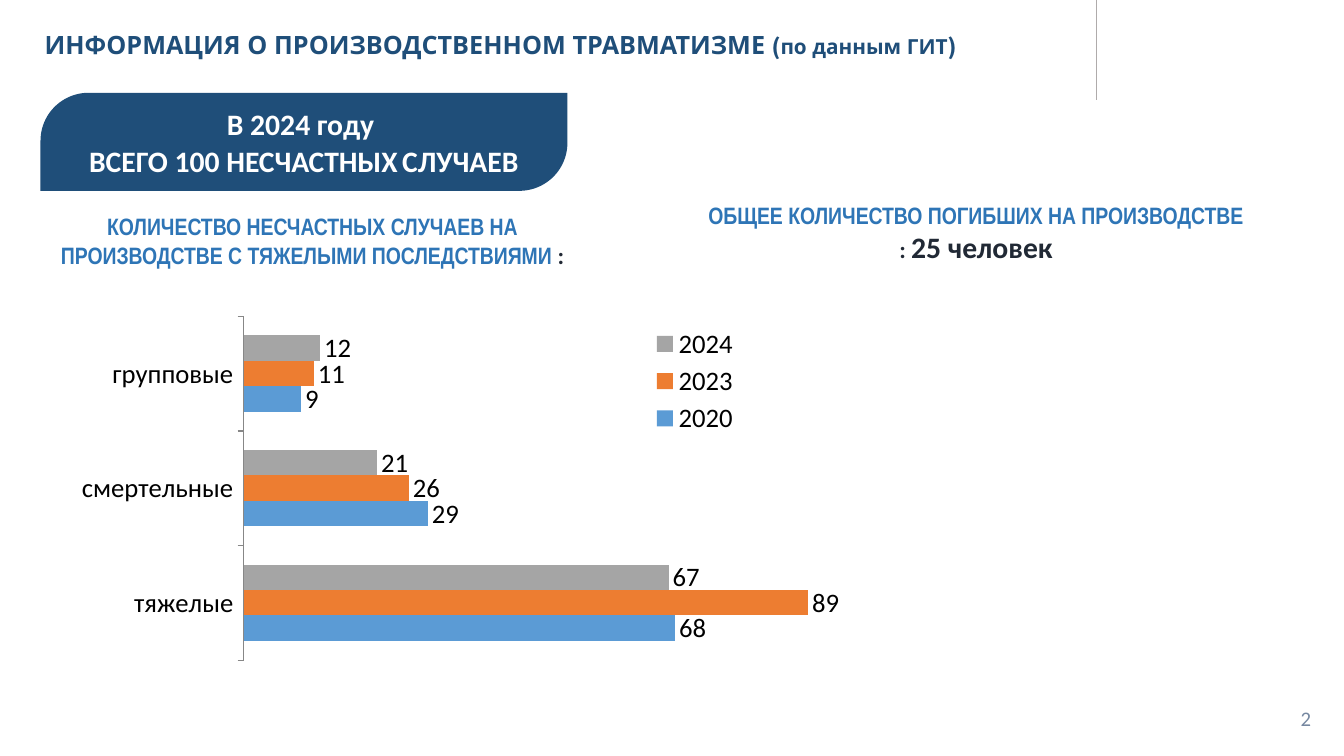
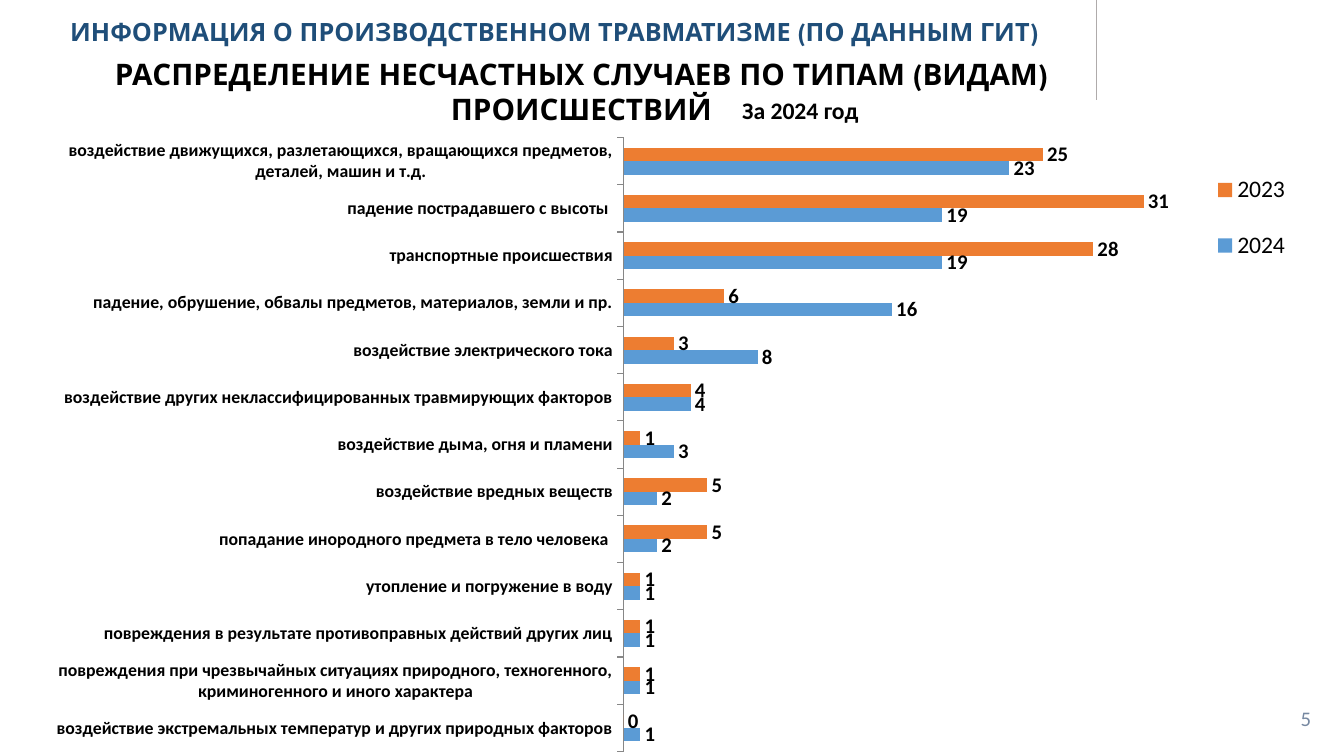
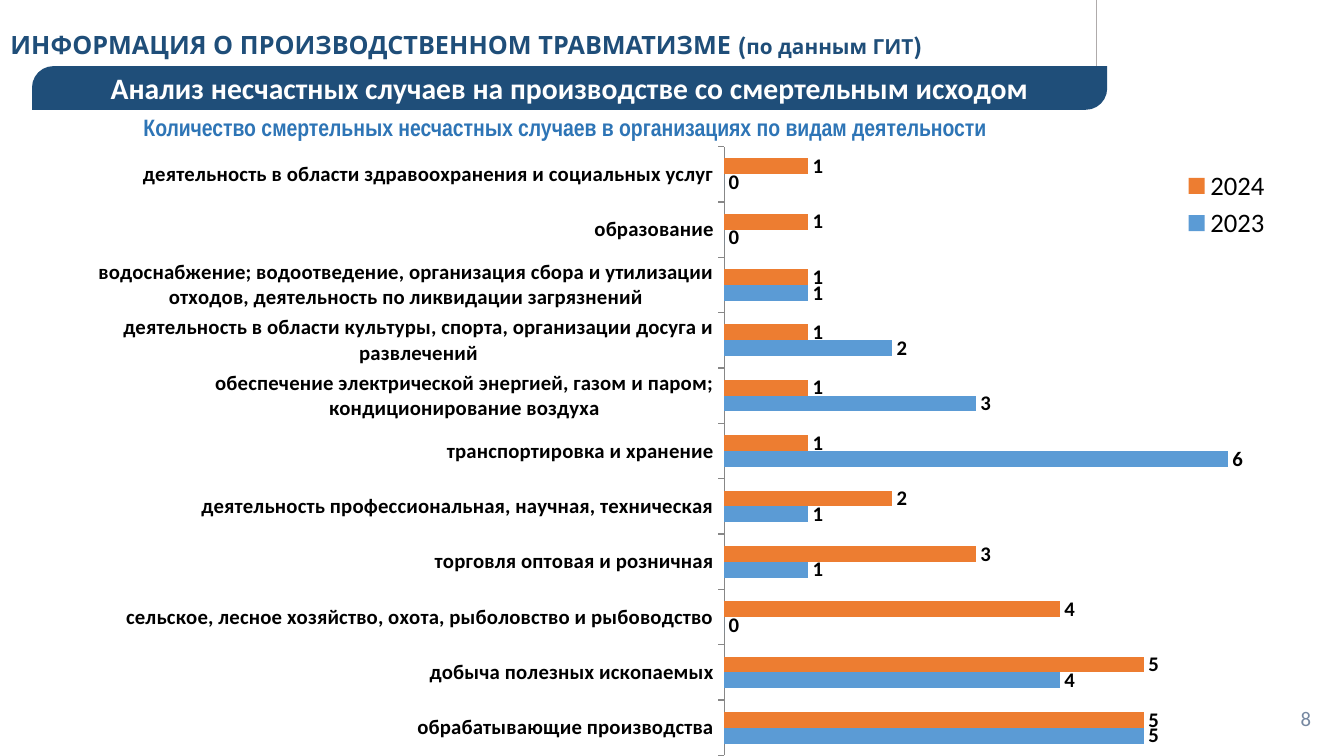
from lxml import etree
from pptx import Presentation
from pptx.chart.data import CategoryChartData
from pptx.dml.color import RGBColor
from pptx.enum.chart import XL_CHART_TYPE as CT, XL_LABEL_POSITION as LP
from pptx.enum.chart import XL_LEGEND_POSITION as LG, XL_TICK_MARK as TM
from pptx.enum.shapes import MSO_CONNECTOR, MSO_SHAPE
from pptx.enum.text import MSO_ANCHOR, PP_ALIGN
from pptx.oxml.ns import qn
from pptx.util import Inches, Pt

NAVY = RGBColor(0x1F, 0x4E, 0x79)
ACCENT = RGBColor(0x2E, 0x75, 0xB6)
INK = RGBColor(0x21, 0x29, 0x35)
BLACK = RGBColor(0, 0, 0)
WHITE = RGBColor(0xFF, 0xFF, 0xFF)
RULE = RGBColor(0xAF, 0xAB, 0xAB)
AXIS = RGBColor(0x87, 0x87, 0x87)
PAGE = RGBColor(0x76, 0x88, 0xA1)
BLUE = RGBColor(0x5B, 0x9B, 0xD5)
ORANGE = RGBColor(0xED, 0x7D, 0x31)
GREY = RGBColor(0xA5, 0xA5, 0xA5)

BODY, HEAD, NARROW = "Calibri", "League Spartan", "Arial Narrow"
TITLE = "ИНФОРМАЦИЯ О ПРОИЗВОДСТВЕННОМ ТРАВМАТИЗМЕ ("
TITLE_RUNS = [TITLE, ("по данным ГИТ", {"size": 14}), ")"]


def set_font(font, name=BODY, size=18, color=BLACK, bold=False):
    font.name, font.size, font.bold = name, Pt(size), bold
    font.color.rgb = color


def write(tf, paragraphs, align=PP_ALIGN.LEFT, spacing=None, before=0, **fmt):
    for i, runs in enumerate(paragraphs):
        p = tf.add_paragraph() if i else tf.paragraphs[0]
        p.alignment = align
        if spacing:
            p.line_spacing = spacing
        if i and before:
            p.space_before = Pt(before)
        for run in runs:
            text, change = (run, {}) if isinstance(run, str) else run
            r = p.add_run()
            r.text = text
            set_font(r.font, **{**fmt, **change})


def set_layout(parent, index, box, inner=False):
    for old in parent.findall(qn("c:layout")):
        parent.remove(old)
    layout = etree.Element(qn("c:layout"))
    manual = etree.SubElement(layout, qn("c:manualLayout"))
    values = [("layoutTarget", "inner")] if inner else []
    values += [("xMode", "edge"), ("yMode", "edge"), *zip("xywh", box)]
    for tag, value in values:
        etree.SubElement(manual, qn("c:" + tag)).set("val", str(value))
    parent.insert(index, layout)


class Deck:
    """Holds the shared style and the slide being drawn."""

    def __init__(self):
        self.prs = Presentation()
        self.prs.slide_width, self.prs.slide_height = Inches(12.6), Inches(7.09)

    def new_slide(self):
        self.s = self.prs.slides.add_slide(self.prs.slide_layouts[6])
        x = Inches(10.28)
        line = self.s.shapes.add_connector(MSO_CONNECTOR.STRAIGHT, x, 0, x, Inches(0.94))
        line.line.color.rgb, line.line.width = RULE, Pt(0.75)
        etree.SubElement(line._element.spPr, qn("a:effectLst"))

    def text(self, box, paragraphs, inset=True, **fmt):
        tf = self.s.shapes.add_textbox(*map(Inches, box)).text_frame
        tf.word_wrap = True
        if not inset:
            tf.margin_left = tf.margin_right = tf.margin_bottom = 0
            tf.margin_top = Inches(0.01)
        write(tf, paragraphs, **fmt)

    def title(self, box, runs):
        self.text(box, [runs], name=HEAD, size=17, color=NAVY, bold=True, spacing=0.9)

    def heading(self, box, paragraphs):
        self.text(box, paragraphs, inset=False, align=PP_ALIGN.CENTER,
                  name=NARROW, size=16, color=ACCENT, bold=True)

    def page(self, number):
        self.text((9.45, 6.57, 2.94, 0.38), [[number]], align=PP_ALIGN.RIGHT, size=14, color=PAGE)

    def banner(self, box, paragraphs):
        sp = self.s.shapes.add_shape(MSO_SHAPE.ROUND_2_DIAG_RECTANGLE, *map(Inches, box))
        sp.adjustments[0], sp.adjustments[1] = 0.49, 0
        sp.shadow.inherit = False
        sp.fill.solid()
        sp.fill.fore_color.rgb = NAVY
        sp.line.fill.background()
        tf = sp.text_frame
        tf.margin_left = tf.margin_top = tf.margin_right = tf.margin_bottom = 0
        tf.vertical_anchor, tf.word_wrap = MSO_ANCHOR.MIDDLE, True
        write(tf, paragraphs, align=PP_ALIGN.CENTER, before=1, size=20, color=WHITE, bold=True)

    def bars(self, box, cats, series, plot, legend, top, cat_font, label_font, legend_size=18):
        data = CategoryChartData()
        data.categories = cats
        for name, values, _ in series:
            data.add_series(name, values)
        chart = self.s.shapes.add_chart(CT.BAR_CLUSTERED, *map(Inches, box), data).chart
        chart.has_title = False
        set_font(chart.font)
        bars = chart.plots[0]
        bars.gap_width, bars.overlap, bars.vary_by_categories = 150, 0, False
        for item, (_, _, color) in zip(bars.series, series):
            item.format.fill.solid()
            item.format.fill.fore_color.rgb = color
            labels = item.data_labels
            labels.show_value, labels.position = True, LP.OUTSIDE_END
            set_font(labels.font, **label_font)
        axis = chart.category_axis
        axis.major_tick_mark, axis.minor_tick_mark = TM.OUTSIDE, TM.NONE
        axis.format.line.color.rgb = AXIS
        set_font(axis.tick_labels.font, **cat_font)
        scale = chart.value_axis
        scale.minimum_scale, scale.maximum_scale = 0, top
        scale.has_major_gridlines = scale.visible = False
        chart.has_legend = True
        chart.legend.position, chart.legend.include_in_layout = LG.RIGHT, False
        set_font(chart.legend.font, size=legend_size)
        set_layout(chart.element.find(".//" + qn("c:plotArea")), 0, plot, inner=True)
        set_layout(chart.element.find(".//" + qn("c:legend")), 1, legend)


def totals(deck):
    deck.new_slide()
    deck.title((0.32, 0.26, 10.16, 0.97), TITLE_RUNS)
    deck.banner((0.38, 0.87, 4.94, 0.92), [
        ["В 2024 году "],
        ["ВСЕГО 100 НЕСЧАСТНЫХ", (" ", {"size": 12}), "СЛУЧАЕВ"]])
    dark = {"name": BODY, "color": INK}
    deck.heading((0.37, 1.98, 5.12, 0.55), [[
        "КОЛИЧЕСТВО НЕСЧАСТНЫХ СЛУЧАЕВ НА ПРОИЗВОДСТВЕ С ТЯЖЕЛЫМИ ПОСЛЕДСТВИЯМИ ",
        (":", dark)]])
    deck.bars((0.43, 2.82, 7.8, 3.43), ["тяжелые", "смертельные", "групповые"],
              [("2020", (68, 29, 9), BLUE), ("2023", (89, 26, 11), ORANGE),
               ("2024", (67, 21, 12), GREY)],
              plot=(0.238, 0.043, 0.762, 0.94), legend=(0.71, 0.06, 0.14, 0.32), top=100,
              cat_font={}, label_font={})
    deck.heading((6.59, 1.87, 5.12, 0.62), [
        ["ОБЩЕЕ КОЛИЧЕСТВО ПОГИБШИХ НА ПРОИЗВОДСТВЕ"],
        [(": ", dark), ("25 человек", {**dark, "size": 20})]])
    deck.page("2")


def incident_types(deck):
    deck.new_slide()
    cats = [
        "воздействие экстремальных температур и других природных факторов",
        "повреждения при чрезвычайных ситуациях природного, техногенного, "
        "криминогенного и иного характера",
        "повреждения в результате противоправных действий других лиц",
        "утопление и погружение в воду",
        "попадание инородного предмета в тело человека ",
        "воздействие вредных веществ",
        "воздействие дыма, огня и пламени",
        "воздействие других неклассифицированных травмирующих факторов",
        "воздействие электрического тока",
        "падение, обрушение, обвалы предметов, материалов, земли и пр.",
        "транспортные происшествия",
        "падение пострадавшего с высоты ",
        "воздействие движущихся, разлетающихся, вращающихся предметов, деталей, машин и т.д."]
    deck.bars((0.27, 1.22, 11.94, 5.87), cats,
              [("2024", (1, 1, 1, 1, 2, 2, 3, 4, 8, 16, 19, 19, 23), BLUE),
               ("2023", (0, 1, 1, 1, 5, 5, 1, 4, 3, 6, 28, 31, 25), ORANGE)],
              plot=(0.467, 0.012, 0.461, 0.981), legend=(0.92, 0.03, 0.08, 0.22), top=35,
              cat_font={"size": 12, "bold": True}, label_font={"size": 14, "bold": True},
              legend_size=16)
    deck.title((0.56, 0.14, 9.77, 0.59), [TITLE + "ПО ДАННЫМ ГИТ)"])
    deck.text((0.28, 0.51, 10.34, 0.69),
              [["РАСПРЕДЕЛЕНИЕ НЕСЧАСТНЫХ СЛУЧАЕВ ПО ТИПАМ (ВИДАМ) ПРОИСШЕСТВИЙ"]],
              inset=False, align=PP_ALIGN.CENTER, name=HEAD, size=20, bold=True)
    deck.text((6.86, 0.85, 3.26, 0.37), [["За 2024 год"]], size=16, bold=True)
    deck.page("5")


def fatal_cases(deck):
    deck.new_slide()
    deck.title((0, 0.26, 10.16, 0.97), TITLE_RUNS)
    deck.banner((0.3, 0.62, 10.08, 0.41),
                [["Анализ несчастных случаев на производстве со смертельным исходом"]])
    deck.heading((0.38, 1.05, 9.84, 0.28), [[
        "Количество смертельных несчастных случаев в организациях по видам деятельности"]])
    cats = [
        "обрабатывающие производства",
        "добыча полезных ископаемых",
        "сельское, лесное хозяйство, охота, рыболовство и рыбоводство",
        "торговля оптовая и розничная",
        "деятельность профессиональная, научная, техническая",
        "транспортировка и хранение",
        "обеспечение электрической энергией, газом и паром; кондиционирование воздуха",
        "деятельность в области культуры, спорта, организации досуга и развлечений",
        "водоснабжение; водоотведение, организация сбора и утилизации отходов, "
        "деятельность по ликвидации загрязнений",
        "образование",
        "деятельность в области здравоохранения и социальных услуг"]
    strong = {"size": 14, "bold": True}
    deck.bars((0.33, 1.37, 12.01, 5.72), cats,
              [("2023", (5, 4, 0, 1, 1, 6, 3, 2, 1, 0, 0), BLUE),
               ("2024", (5, 5, 4, 3, 2, 1, 1, 1, 1, 1, 1), ORANGE)],
              plot=(0.538, 0, 0.459, 1), legend=(0.88, 0.03, 0.1, 0.13), top=7,
              cat_font=strong, label_font=strong)
    deck.page("8")


def main():
    deck = Deck()
    for build in (totals, incident_types, fatal_cases):
        build(deck)
    deck.prs.save("out.pptx")


if __name__ == "__main__":
    main()
